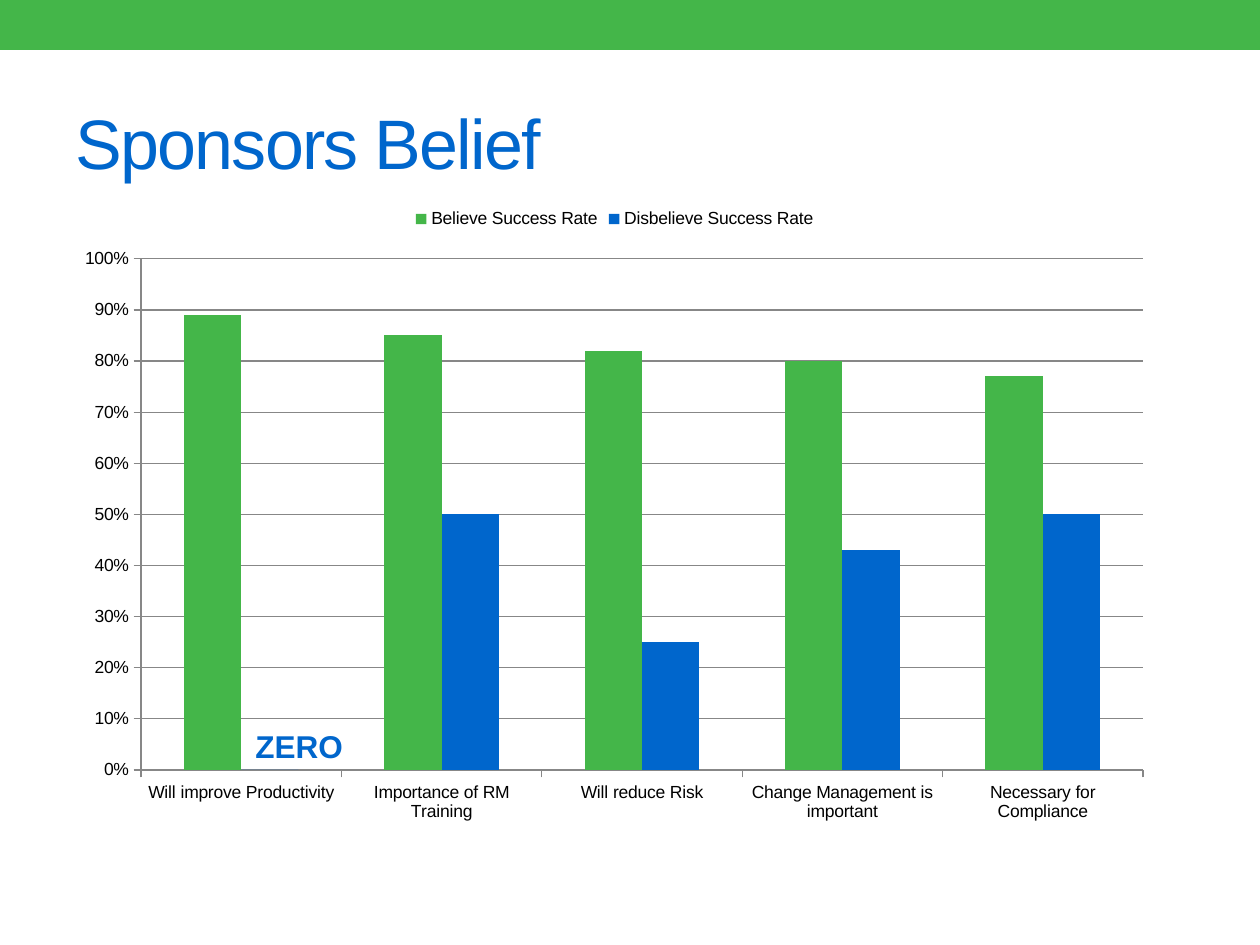
"""Build the Sponsors Belief slide with its clustered column chart."""
from lxml import etree
from pptx import Presentation
from pptx.chart.data import CategoryChartData
from pptx.dml.color import RGBColor as RGB
from pptx.enum.chart import XL_CHART_TYPE as ChartType, XL_LEGEND_POSITION as LegendPosition
from pptx.enum.chart import XL_TICK_MARK as TickMark
from pptx.enum.shapes import MSO_SHAPE as Preset
from pptx.enum.text import MSO_ANCHOR as Anchor, MSO_AUTO_SIZE as AutoSize, PP_ALIGN as Align
from pptx.oxml.ns import qn
from pptx.util import Pt

EMU_PER_PX = 914400 / 126
COLORS = {"green": "44B649", "blue": "0066CC", "text": "000000", "grid": "878787"}


def px(*lengths):
    return [round(length * EMU_PER_PX) for length in lengths]


def style_font(font, size, color, bold=False):
    font.name, font.size, font.bold = "Arial", Pt(size), bold
    font.color.rgb = RGB.from_string(COLORS[color])


presentation = Presentation()
presentation.slide_width, presentation.slide_height = px(1260, 945)
slide = presentation.slides.add_slide(presentation.slide_layouts[5])

banner = slide.shapes.add_shape(Preset.RECTANGLE, *px(0, 0, 1260, 50))
banner.shadow.inherit = False
banner.fill.solid()
banner.fill.fore_color.rgb = RGB.from_string(COLORS["green"])
banner.line.fill.background()

title = slide.shapes.title
title.left, title.top, title.width, title.height = px(63, 73, 1134, 136)
title.text_frame.text = "Sponsors Belief"
title.text_frame.vertical_anchor = Anchor.MIDDLE
paragraph = title.text_frame.paragraphs[0]
paragraph.alignment = Align.LEFT
style_font(paragraph.font, 40, "blue")
paragraph.runs[0].font._element.set("spc", "-100")

chart_data = CategoryChartData(number_format="0%")
chart_data.categories = [
    "Will improve Productivity",
    "Importance of RM Training",
    "Will reduce Risk",
    "Change Management is important",
    "Necessary for Compliance",
]
chart_data.add_series("Believe Success Rate", [0.89, 0.85, 0.82, 0.8, 0.77])
chart_data.add_series("Disbelieve Success Rate", [0, 0.5, 0.25, 0.43, 0.5])
chart = slide.shapes.add_chart(
    ChartType.COLUMN_CLUSTERED, *px(64, 195, 1101, 639), chart_data
).chart
style_font(chart.font, 10, "text")
chart.has_title = False
chart.has_legend = True
chart.legend.position = LegendPosition.TOP
chart.legend.include_in_layout = False

plot = chart.plots[0]
plot.gap_width, plot.overlap = 150, 0
plot.vary_by_categories = False
for series, color in zip(plot.series, ("green", "blue")):
    series.format.fill.solid()
    series.format.fill.fore_color.rgb = RGB.from_string(COLORS[color])

value_axis, category_axis = chart.value_axis, chart.category_axis
value_axis.minimum_scale, value_axis.maximum_scale, value_axis.major_unit = 0, 1, 0.1
value_axis.tick_labels.number_format = "0%"
value_axis.tick_labels.number_format_is_linked = False
for axis in (value_axis, category_axis):
    axis.major_tick_mark = TickMark.OUTSIDE
for lines in (value_axis, category_axis, value_axis.major_gridlines):
    lines.format.line.color.rgb = RGB.from_string(COLORS["grid"])
    lines.format.line.width = Pt(0.75)

plot_area = chart._chartSpace.chart.plotArea
for old_layout in plot_area.findall(qn("c:layout")):
    plot_area.remove(old_layout)
layout = etree.Element(qn("c:layout"))
manual_layout = etree.SubElement(layout, qn("c:manualLayout"))
for tag, value in (
    ("layoutTarget", "inner"), ("xMode", "edge"), ("yMode", "edge"),
    ("x", "0.07"), ("y", "0.1"), ("w", "0.91"), ("h", "0.8"),
):
    etree.SubElement(manual_layout, qn(f"c:{tag}")).set("val", value)
plot_area.insert(0, layout)

zero_label = slide.shapes.add_textbox(*px(243, 721, 113, 50))
zero_label.text_frame.word_wrap = False
zero_label.text_frame.auto_size = AutoSize.SHAPE_TO_FIT_TEXT
zero_label.text_frame.text = "ZERO"
style_font(zero_label.text_frame.paragraphs[0].font, 18, "blue", bold=True)

presentation.save("out.pptx")
